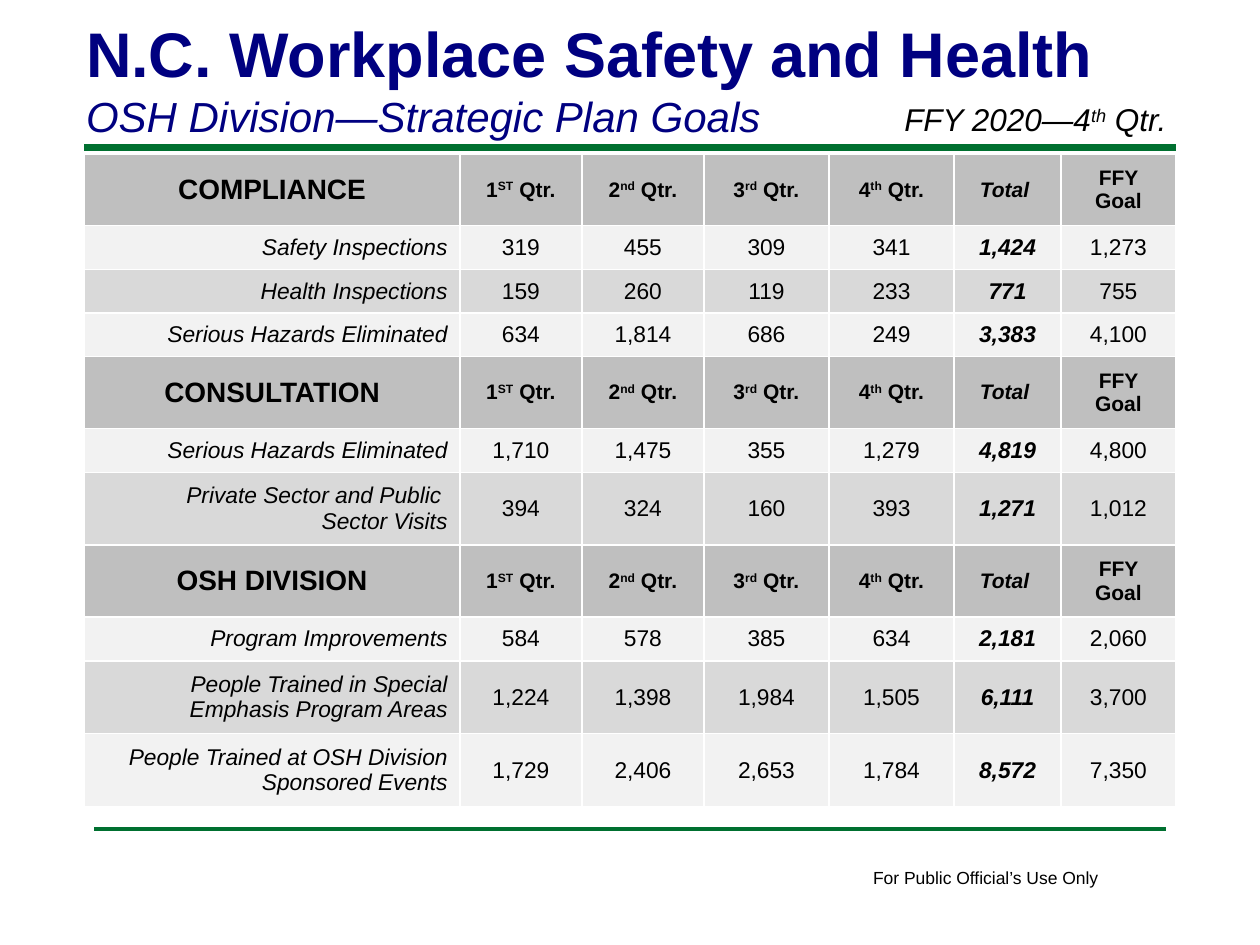
from lxml import etree
from pptx import Presentation
from pptx.dml.color import RGBColor
from pptx.enum.shapes import MSO_CONNECTOR
from pptx.enum.text import MSO_ANCHOR, PP_ALIGN
from pptx.oxml.ns import qn
from pptx.util import Cm, Pt

LEFT, CENTER, RIGHT = PP_ALIGN.LEFT, PP_ALIGN.CENTER, PP_ALIGN.RIGHT
MIDDLE, BOTTOM = MSO_ANCHOR.MIDDLE, MSO_ANCHOR.BOTTOM
STRAIGHT = MSO_CONNECTOR.STRAIGHT

FONT = "Arial"
NAVY = RGBColor(0x00, 0x00, 0x80)
GREEN = RGBColor(0x00, 0x70, 0x30)
BLACK = RGBColor(0x00, 0x00, 0x00)
HEAD_GRAY = RGBColor(0xBF, 0xBF, 0xBF)
BANDS = RGBColor(0xF2, 0xF2, 0xF2), RGBColor(0xD9, 0xD9, 0xD9)

# Content: "^" marks the start and end of a superscript
TITLE = "N.C. Workplace Safety and Health"
SUBTITLE = "OSH Division—Strategic Plan Goals"
PERIOD = "FFY 2020—4^th^ Qtr."
FOOTER = "For Public Official’s Use Only"
HEADINGS = ["1^ST^ Qtr.", "2^nd^ Qtr.", "3^rd^ Qtr.", "4^th^ Qtr.", "Total ", "FFY Goal"]
SECTIONS = [
    ("COMPLIANCE", [
        ("Safety Inspections", "319", "455", "309", "341", "1,424", "1,273"),
        ("Health Inspections", "159", "260", "119", "233", "771", "755"),
        ("Serious Hazards Eliminated", "634", "1,814", "686", "249", "3,383", "4,100"),
    ]),
    ("CONSULTATION", [
        ("Serious Hazards Eliminated", "1,710", "1,475", "355", "1,279", "4,819", "4,800"),
        ("Private Sector and Public \nSector Visits",
         "394", "324", "160", "393", "1,271", "1,012"),
    ]),
    ("OSH DIVISION", [
        ("Program Improvements", "584", "578", "385", "634", "2,181", "2,060"),
        ("People Trained in Special Emphasis Program Areas",
         "1,224", "1,398", "1,984", "1,505", "6,111", "3,700"),
        ("People Trained at OSH Division Sponsored Events",
         "1,729", "2,406", "2,653", "1,784", "8,572", "7,350"),
    ]),
]
COL_WIDTHS = [7.57, 2.46, 2.46, 2.52, 2.52, 2.16, 2.31]
HEAD_HEIGHT, ONE_LINE, TWO_LINES = 1.45, 0.88, 1.47
LABEL_CHARS = 30  # longer labels take two lines
TOTAL_COL = 5


def write(p, text, size, color=BLACK, bold=False, italic=False, align=LEFT):
    for i, part in enumerate(text.split("^")):
        r = p.add_run()
        r.text = part
        if i % 2:
            r._r.get_or_add_rPr().set("baseline", "30000")
    p.alignment = align
    f = p.font
    f.name, f.size, f.bold, f.italic = FONT, Pt(size), bold, italic
    f.color.rgb = color


def add_rule(slide, x1, x2, y, width):
    line = slide.shapes.add_connector(STRAIGHT, Cm(x1), Cm(y), Cm(x2), Cm(y))
    line.line.color.rgb = GREEN
    line.line.width = Pt(width)
    etree.SubElement(line._element.spPr, qn("a:effectLst"))


def add_text(slide, box, text, size, wrap=True, italic=False):
    tf = slide.shapes.add_textbox(*map(Cm, box)).text_frame
    tf.word_wrap = wrap
    write(tf.paragraphs[0], text, size, italic=italic)


def fill_cell(cell, text, fill, **style):
    cell.vertical_anchor = MIDDLE
    tcPr = cell._tc.get_or_add_tcPr()
    for side in ("lnL", "lnR", "lnT", "lnB"):
        ln = etree.SubElement(tcPr, qn(f"a:{side}"), w=str(Pt(1)))
        solid = etree.SubElement(ln, qn("a:solidFill"))
        etree.SubElement(solid, qn("a:srgbClr"), val="FFFFFF")
    cell.fill.solid()
    cell.fill.fore_color.rgb = fill
    tf = cell.text_frame
    for i, line in enumerate(text.split("\n")):
        write(tf.add_paragraph() if i else tf.paragraphs[0], line, **style)


def add_goal_table(slide):
    n_rows = sum(1 + len(rows) for _, rows in SECTIONS)
    frame = slide.shapes.add_table(n_rows, len(COL_WIDTHS), Cm(1.7), Cm(3.1),
                                   Cm(sum(COL_WIDTHS)), Cm(13.16))
    table = frame.table
    table.first_row = table.horz_banding = False
    for col, width in zip(table.columns, COL_WIDTHS):
        col.width = Cm(width)

    y = 0
    for section, rows in SECTIONS:
        # Section heading
        table.rows[y].height = Cm(HEAD_HEIGHT)
        for x, text in enumerate([section] + HEADINGS):
            fill_cell(table.cell(y, x), text, HEAD_GRAY, size=12 if x else 16,
                      bold=True, italic=x == TOTAL_COL, align=CENTER)
        y += 1
        # Measures
        for i, row in enumerate(rows):
            table.rows[y].height = Cm(TWO_LINES if len(row[0]) > LABEL_CHARS else ONE_LINE)
            for x, text in enumerate(row):
                fill_cell(table.cell(y, x), text, BANDS[i % 2], size=13,
                          bold=x == TOTAL_COL, italic=x in (0, TOTAL_COL),
                          align=CENTER if x else RIGHT)
            y += 1


def main():
    prs = Presentation()
    prs.slide_width, prs.slide_height = Cm(25.4), Cm(19.05)
    slide = prs.slides.add_slide(prs.slide_layouts[5])

    # Rules and footer
    add_rule(slide, 1.7, 23.7, 2.97, 4)
    add_rule(slide, 1.9, 23.7 - 0.2, 16.71, 2)
    add_text(slide, (17.35, 17.35, 5.1, 0.69), FOOTER, 10, wrap=False)

    # Title
    title = slide.shapes.title
    title.left, title.top, title.width, title.height = map(Cm, (1.48, 0.15, 20.95, 2.82))
    tf = title.text_frame
    tf.vertical_anchor = BOTTOM
    write(tf.paragraphs[0], TITLE, 36, NAVY, bold=True)
    write(tf.add_paragraph(), SUBTITLE, 24, NAVY, italic=True)

    # Goals and reporting period
    add_goal_table(slide)
    add_text(slide, (17.98, 1.9, 6.35, 1.02), PERIOD, 18, italic=True)

    prs.save("out.pptx")


if __name__ == "__main__":
    main()
